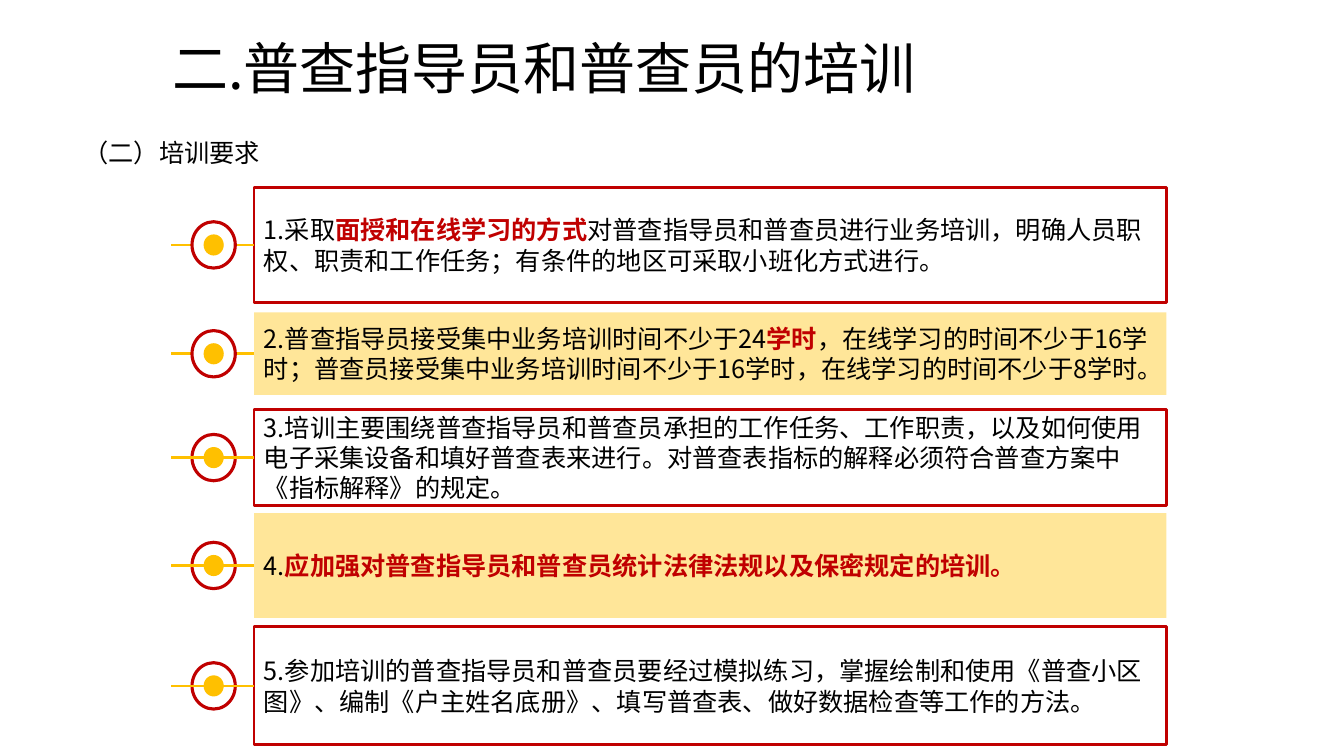
from dataclasses import dataclass

from lxml.etree import SubElement
from pptx import Presentation
from pptx.dml.color import RGBColor as RGB
from pptx.enum.shapes import MSO_CONNECTOR as CONN, MSO_SHAPE as SHAPE
from pptx.enum.text import MSO_ANCHOR as ANCHOR, PP_ALIGN as ALIGN
from pptx.oxml.ns import qn
from pptx.util import Inches, Pt


@dataclass(frozen=True)
class Theme:
    font: str = "Noto Sans CJK SC"
    black: RGB = RGB(0x00, 0x00, 0x00)
    white: RGB = RGB(0xFF, 0xFF, 0xFF)
    red: RGB = RGB(0xC0, 0x00, 0x00)
    gold: RGB = RGB(0xFF, 0xC0, 0x00)
    sand: RGB = RGB(0xFF, 0xE6, 0x99)
    title: int = 40
    body: int = 18
    line: float = 2
    ring: float = 2.25


T = Theme()
W, H = Inches(13.33), Inches(7.5)

# Columns, in percent of the slide's width
LINE_X, RING_X, BOX_X, BOX_W = 12.75, 15.9, 18.9, 67.88
RING, DOT = (3.22, 6.13), (1.5, 2.8)

# Requirements: top and height in percent of the slide's height,
# line drawn over the ring, then runs as (text, emphasised)
REQUIREMENTS = [
    (24.8, 15.2, False, [
        ("1.采取", False), ("面授和在线学习的方式", True),
        ("对普查指导员和普查员进行业务培训，明确人员职权、职责和工作任务；"
         "有条件的地区可采取小班化方式进行。", False)]),
    (41.33, 10.93, False, [
        ("2.普查指导员接受集中业务培训时间不少于24", False), ("学时", True),
        ("，在线学习的时间不少于16学时；普查员接受集中业务培训时间不少于16学时，"
         "在线学习的时间不少于8学时。", False)]),
    (54.13, 12.8, True, [
        ("3.培训主要围绕普查指导员和普查员承担的工作任务、工作职责，"
         "以及如何使用电子采集设备和填好普查表来进行。"
         "对普查表指标的解释必须符合普查方案中《指标解释》的规定。", False)]),
    (67.87, 13.87, True, [
        ("4.", False),
        ("应加强对普查指导员和普查员统计法律法规以及保密规定的培训。", True)]),
    (82.93, 15.6, True, [
        ("5.参加培训的普查指导员和普查员要经过模拟练习，"
         "掌握绘制和使用《普查小区图》、编制《户主姓名底册》、填写普查表、"
         "做好数据检查等工作的方法。", False)]),
]


def x(share):
    return round(W * share / 100)


def y(share):
    return round(H * share / 100)


def write(tf, runs, size, anchor, spacing=1.0):
    tf.word_wrap = True
    tf.vertical_anchor = anchor
    p = tf.paragraphs[0]
    p.alignment = ALIGN.LEFT
    p.line_spacing = spacing
    p.font.name, p.font.size = T.font, Pt(size)
    p.font.color.rgb = T.black
    # East Asian typeface
    SubElement(p._p.pPr.find(qn("a:defRPr")), qn("a:ea"), typeface=T.font)
    for text, emphasised in runs:
        r = p.add_run()
        r.text = text
        if emphasised:
            r.font.bold = True
            r.font.color.rgb = T.red


def add_text(slide, left, top, width, height, text, size, anchor, spacing):
    box = slide.shapes.add_textbox(x(left), y(top), x(width), y(height))
    write(box.text_frame, [(text, False)], size, anchor, spacing)
    return box


def add_figure(shapes, kind, left, top, width, height, fill, weight=None):
    sp = shapes.add_shape(kind, x(left), y(top), x(width), y(height))
    sp.shadow.inherit = False
    sp.fill.solid()
    sp.fill.fore_color.rgb = fill
    if weight:
        sp.line.color.rgb = T.red
        sp.line.width = Pt(weight)
    else:
        sp.line.fill.background()
    return sp


def add_lead(slide, middle):
    line = slide.shapes.add_connector(
        CONN.STRAIGHT, x(LINE_X), y(middle), x(BOX_X), y(middle))
    line.line.color.rgb = T.gold
    line.line.width = Pt(T.line)
    SubElement(line._element.spPr, qn("a:effectLst"))


def add_target(slide, middle):
    group = slide.shapes.add_group_shape()
    for (w, h), fill, weight in ((RING, T.white, T.ring), (DOT, T.gold, None)):
        add_figure(group.shapes, SHAPE.OVAL, RING_X - w / 2, middle - h / 2,
                   w, h, fill, weight)


def add_requirement(slide, top, height, line_over, runs, outlined):
    fill, weight = (T.white, T.line) if outlined else (T.sand, None)
    box = add_figure(slide.shapes, SHAPE.RECTANGLE, BOX_X, top, BOX_W, height,
                     fill, weight)
    write(box.text_frame, runs, T.body, ANCHOR.MIDDLE)
    marker = [add_target, add_lead] if line_over else [add_lead, add_target]
    for add_part in marker:
        add_part(slide, top + height / 2)


def main():
    prs = Presentation()
    prs.slide_width, prs.slide_height = W, H
    slide = prs.slides.add_slide(prs.slide_layouts[6])

    # Headings
    title = add_text(slide, 12.08, 0, 86.25, 13.47, "二.普查指导员和普查员的培训",
                     T.title, ANCHOR.BOTTOM, 0.9)
    title.text_frame.margin_bottom = 0
    add_text(slide, 5.48, 17.07, 23.63, 5.47, "（二）培训要求",
             T.body, ANCHOR.TOP, 1.1)

    # Requirements, alternately outlined and filled
    for i, requirement in enumerate(REQUIREMENTS):
        add_requirement(slide, *requirement, outlined=i % 2 == 0)

    prs.save("out.pptx")


if __name__ == "__main__":
    main()
